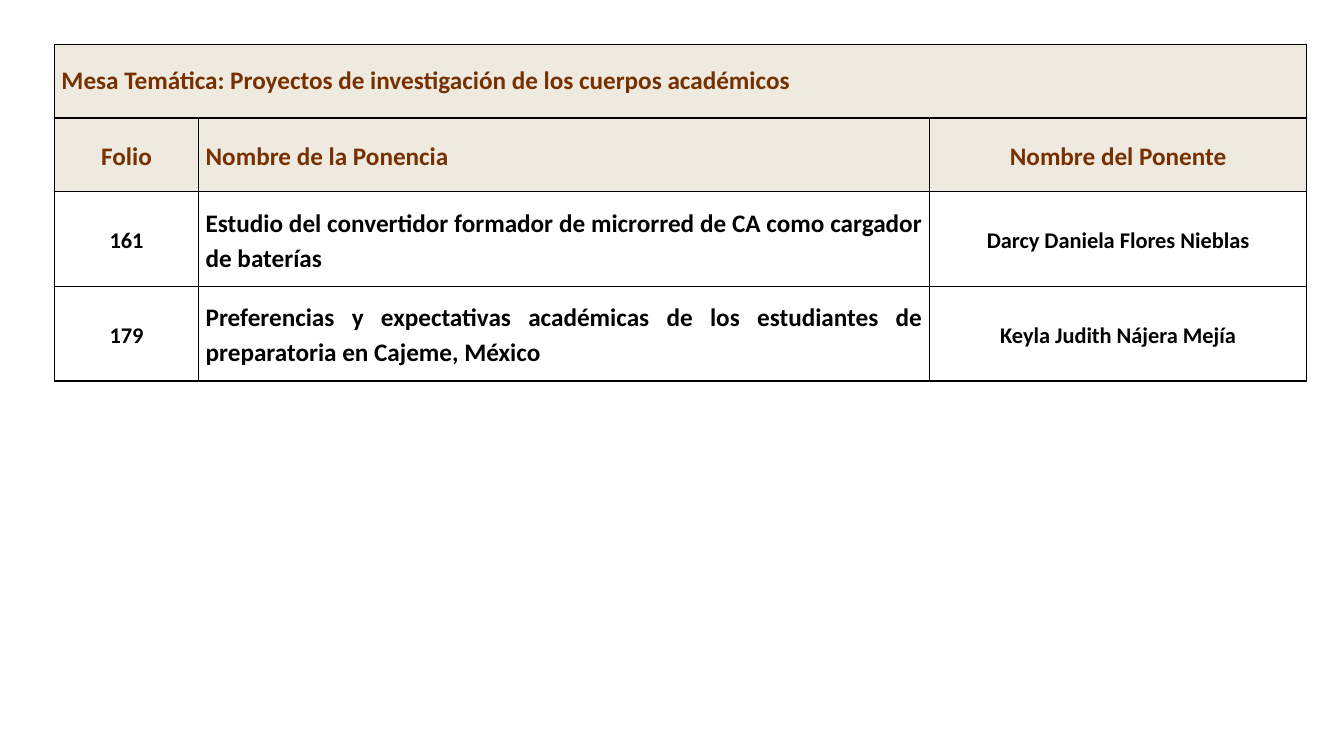
"""Build a slide with the table of talks for one thematic session."""
import lxml.etree
import pptx
import pptx.dml.color
import pptx.enum.text
import pptx.oxml.ns
import pptx.util

Inches = pptx.util.Inches
Pt = pptx.util.Pt
ALIGN = pptx.enum.text.PP_ALIGN


def color(value):
    return pptx.dml.color.RGBColor.from_string(value)


def add_borders(cell, value, width):
    properties = cell._tc.get_or_add_tcPr()
    for side in ("lnL", "lnR", "lnT", "lnB"):
        line = lxml.etree.SubElement(properties, pptx.oxml.ns.qn(f"a:{side}"), w=str(Pt(width)))
        fill = lxml.etree.SubElement(line, pptx.oxml.ns.qn("a:solidFill"))
        lxml.etree.SubElement(fill, pptx.oxml.ns.qn("a:srgbClr"), val=value)


presentation = pptx.Presentation()
presentation.slide_width = Inches(13.33)
presentation.slide_height = Inches(7.5)
slide = presentation.slides.add_slide(presentation.slide_layouts[6])

rows = [
    ("Mesa Temática: Proyectos de investigación de los cuerpos académicos", "", ""),
    ("Folio", "Nombre de la Ponencia", "Nombre del Ponente"),
    ("161", "Estudio del convertidor formador de microrred de CA como cargador de baterías",
     "Darcy Daniela Flores Nieblas"),
    ("179", "Preferencias y expectativas académicas de los estudiantes de preparatoria en Cajeme, México",
     "Keyla Judith Nájera Mejía"),
]
column_widths = [1.43, 7.25, 3.74]
row_heights = [0.73, 0.73, 0.94, 0.94]
line_spacings = [1.0, 1.15, 1.14, 1.14]

table = slide.shapes.add_table(
    len(rows), len(column_widths), Inches(0.54), Inches(0.44),
    Inches(sum(column_widths)), Inches(sum(row_heights))).table
for column, width in zip(table.columns, column_widths):
    column.width = Inches(width)
for row, height in zip(table.rows, row_heights):
    row.height = Inches(height)
table.cell(0, 0).merge(table.cell(0, 2))

for row_index, texts in enumerate(rows):
    is_header = row_index < 2
    for column_index, text in enumerate(texts):
        cell = table.cell(row_index, column_index)
        add_borders(cell, "000000", 1)
        if is_header:
            cell.fill.solid()
            cell.fill.fore_color.rgb = color("EFEADF")
        else:
            cell.fill.background()
        cell.vertical_anchor = pptx.enum.text.MSO_ANCHOR.MIDDLE
        cell.margin_left = cell.margin_right = Inches(0.07)
        cell.margin_top = cell.margin_bottom = 0
        cell.text = text
        paragraph = cell.text_frame.paragraphs[0]
        is_justified = row_index == 0 or column_index == 1
        paragraph.alignment = ALIGN.JUSTIFY if is_justified else ALIGN.CENTER
        paragraph.line_spacing = line_spacings[row_index]
        paragraph.font.name = "Calibri"
        paragraph.font.bold = True
        paragraph.font.size = Pt(18 if is_header or column_index == 1 else 16)
        paragraph.font.color.rgb = color("773000" if is_header else "000000")

presentation.save("out.pptx")
